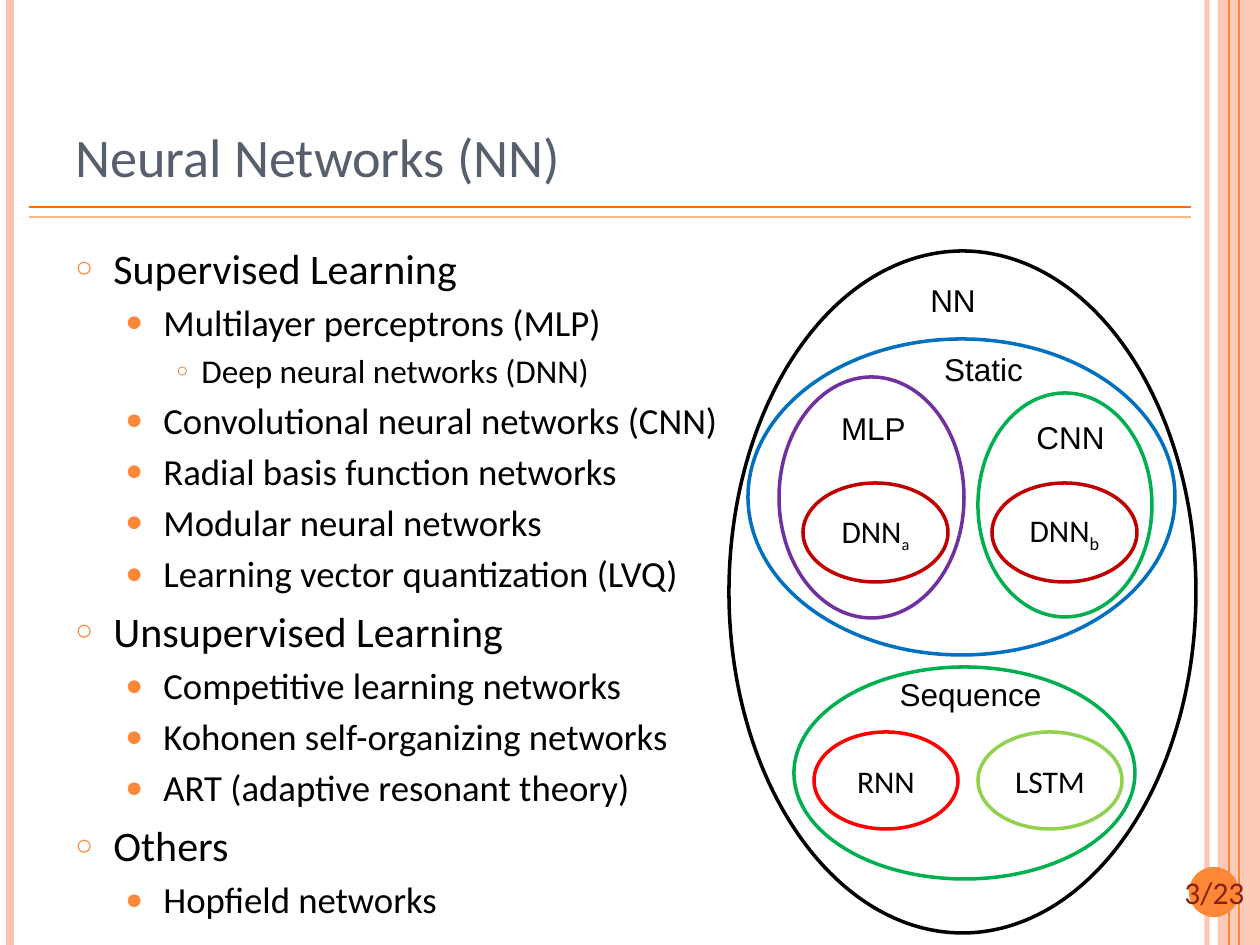
from collections import namedtuple
from dataclasses import dataclass

from lxml.etree import SubElement
from pptx import Presentation
from pptx.dml.color import RGBColor
from pptx.enum.shapes import MSO_CONNECTOR, MSO_SHAPE
from pptx.enum.text import MSO_ANCHOR, PP_ALIGN
from pptx.oxml.ns import qn
from pptx.util import Emu, Pt

Box = namedtuple("Box", "left top width height")
Level = namedtuple("Level", "size margin hanging before bullet bullet_color bullet_percent")


@dataclass(frozen=True)
class Theme:
    """Colours, fonts and type sizes of the deck."""
    body_font: str = "Calibri"
    label_font: str = "Arial"
    title_size: int = 31
    label_size: int = 18
    small_size: int = 16
    outline_width: int = 2
    ink: str = "000000"
    title: str = "575F6D"
    number: str = "862110"
    orange: str = "FE8637"
    dark_orange: str = "E07631"
    rule: str = "FF6B0A"
    pale_rule: str = "FEB687"
    pink: str = "FEC3AE"
    red: str = "FF0000"
    dark_red: str = "C00000"
    purple: str = "7030A0"
    blue: str = "0070C0"
    green: str = "00B050"
    lime: str = "92D050"


THEME = Theme()
LEVELS = (
    Level(24, 38, 38, 6, "○", THEME.orange, 70),
    Level(21, 88, 38, 4, "●", THEME.orange, 80),
    Level(19, 126, 25, 4, "○", THEME.dark_orange, 60),
)
OUTLINE = (
    (0, "Supervised Learning"),
    (1, "Multilayer perceptrons (MLP)"),
    (2, "Deep neural networks (DNN)"),
    (1, "Convolutional neural networks (CNN)"),
    (1, "Radial basis function networks"),
    (1, "Modular neural networks"),
    (1, "Learning vector quantization (LVQ)"),
    (0, "Unsupervised Learning"),
    (1, "Competitive learning networks"),
    (1, "Kohonen self-organizing networks"),
    (1, "ART (adaptive resonant theory)"),
    (0, "Others"),
    (1, "Hopfield networks"),
)


def px(length):
    """Turn px into EMU."""
    return Emu(round(length * 914400 / 126))


def inside(box, left, top, width, height):
    """Shift a part into the box that holds it."""
    return Box(box.left + left, box.top + top, width, height)


def set_alpha(fill, percent):
    """Make a solid fill partly transparent."""
    color = fill._xPr.find(qn("a:solidFill")).find(qn("a:srgbClr"))
    SubElement(color, qn("a:alpha")).set("val", str(percent * 1000))


def add_span(para, text, size, color, font):
    """Add one run of text and return it."""
    span = para.add_run()
    span.text = text
    span.font.size = Pt(size)
    span.font.name = font
    span.font.color.rgb = RGBColor.from_string(color)
    return span


def add_text_frame(page, box, anchor=MSO_ANCHOR.TOP, wrap=True):
    """Add an empty text box and return its frame."""
    frame = page.shapes.add_textbox(*map(px, box)).text_frame
    frame.word_wrap = wrap
    frame.vertical_anchor = anchor
    return frame


def add_preset(page, kind, box, fill=None, line=None):
    """Add a flat preset shape with an optional fill and outline."""
    shape = page.shapes.add_shape(kind, *map(px, box))
    shape.shadow.inherit = False
    if fill:
        shape.fill.solid()
        shape.fill.fore_color.rgb = RGBColor.from_string(fill)
    else:
        shape.fill.background()
    if line:
        shape.line.color.rgb = RGBColor.from_string(line)
        shape.line.width = Pt(THEME.outline_width)
    else:
        shape.line.fill.background()
    return shape


def add_rule(page, box, color, weight):
    """Draw a straight line across a box of no width or no height."""
    rule = page.shapes.add_connector(
        MSO_CONNECTOR.STRAIGHT, px(box.left), px(box.top),
        px(box.left + box.width), px(box.top + box.height))
    rule.line.color.rgb = RGBColor.from_string(color)
    rule.line.width = Pt(weight)
    SubElement(rule._element.spPr, qn("a:effectLst"))
    return rule


def add_frame(page, box):
    """Draw the side stripes and the rules under the title."""
    stripe = add_rule(page, inside(box, 1207, 0, 0, box.height), THEME.pink, 3)
    set_alpha(stripe.line.fill, 93)
    band = add_preset(page, MSO_SHAPE.RECTANGLE, inside(box, 1218, 0, 42, box.height), THEME.pink)
    set_alpha(band.fill, 87)
    for left, color, weight in (
            (10, THEME.pink, 4.5), (1239, THEME.orange, 1.5), (1229, THEME.orange, 0.75)):
        add_rule(page, inside(box, left, 0, 0, box.height), color, weight)
    for top, color in ((207, THEME.rule), (217, THEME.pale_rule)):
        add_rule(page, inside(box, 29, top, 1162, 0), color, 1)


def add_page_number(page, box):
    """Place the page number over its disc."""
    add_preset(page, MSO_SHAPE.OVAL, inside(box, 32, 0, 50, 50), THEME.orange)
    para = add_text_frame(page, box).paragraphs[0]
    para.alignment = PP_ALIGN.CENTER
    add_span(para, "3/23", THEME.label_size, THEME.number, THEME.body_font)


def add_title(page, box):
    """Place the title at the foot of its box."""
    para = add_text_frame(page, box, MSO_ANCHOR.BOTTOM).paragraphs[0]
    add_span(para, "Neural Networks (NN)", THEME.title_size, THEME.title, THEME.body_font)


def add_bullet(para, level):
    """Give a paragraph the indent and bullet of its level."""
    properties = para._p.get_or_add_pPr()
    properties.set("marL", str(px(level.margin)))
    properties.set("indent", str(-px(level.hanging)))
    color = SubElement(properties, qn("a:buClr"))
    SubElement(color, qn("a:srgbClr")).set("val", level.bullet_color)
    SubElement(properties, qn("a:buSzPct")).set("val", str(level.bullet_percent * 1000))
    SubElement(properties, qn("a:buFont")).set("typeface", THEME.label_font)
    SubElement(properties, qn("a:buChar")).set("char", level.bullet)


def add_outline(page, box):
    """Write the bulleted list of network types."""
    frame = add_text_frame(page, box)
    for index, (depth, text) in enumerate(OUTLINE):
        para = frame.add_paragraph() if index else frame.paragraphs[0]
        level = LEVELS[depth]
        para.level = depth
        add_bullet(para, level)
        if index:
            para.space_before = Pt(level.before)
        add_span(para, text, level.size, THEME.ink, THEME.body_font)


def add_diagram(page, box):
    """Draw the nested sets of networks with their names."""
    for part, color, name, subscript, subscript_size in (
            ((0, 0, box.width, box.height), THEME.ink, "", "", 0),
            ((74, 232, 145, 99), THEME.dark_red, "DNN", "a", THEME.small_size),
            ((50, 126, 185, 241), THEME.purple, "", "", 0),
            ((249, 142, 174, 224), THEME.green, "", "", 0),
            ((85, 481, 144, 97), THEME.red, "RNN", "", 0),
            ((19, 88, 427, 316), THEME.blue, "", "", 0),
            ((65, 416, 341, 212), THEME.green, "", "", 0),
            ((249, 481, 144, 97), THEME.lime, "LSTM", "", 0),
            ((263, 232, 145, 99), THEME.dark_red, "DNN", "b", THEME.label_size)):
        oval = add_preset(page, MSO_SHAPE.OVAL, inside(box, *part), line=color)
        if name:
            oval.text_frame.word_wrap = False
            oval.text_frame.vertical_anchor = MSO_ANCHOR.MIDDLE
            para = oval.text_frame.paragraphs[0]
            para.alignment = PP_ALIGN.CENTER
            add_span(para, name, THEME.label_size, THEME.ink, THEME.body_font)
        if subscript:
            span = add_span(para, subscript, subscript_size, THEME.ink, THEME.body_font)
            span.font._element.set("baseline", "-25000")
    for name, left, top, width in (
            ("NN", 188, 24, 72), ("Static", 202, 93, 105), ("Sequence", 157, 418, 169),
            ("MLP", 99, 152, 91), ("CNN", 294, 161, 95)):
        para = add_text_frame(page, inside(box, left, top, width, 50), wrap=False).paragraphs[0]
        para.alignment = PP_ALIGN.CENTER
        add_span(para, name, THEME.label_size, THEME.ink, THEME.label_font)


def main():
    """Build the deck and save it."""
    deck = Presentation()
    deck.slide_width, deck.slide_height = px(1260), px(945)
    page = deck.slides.add_slide(deck.slide_layouts[6])
    add_frame(page, Box(0, 0, 1260, 945))
    add_page_number(page, Box(1157, 867, 115, 50))
    add_title(page, Box(63, 38, 1089, 157))
    add_outline(page, Box(63, 236, 1029, 656))
    add_diagram(page, Box(729, 251, 467, 682))
    deck.save("out.pptx")


if __name__ == "__main__":
    main()
